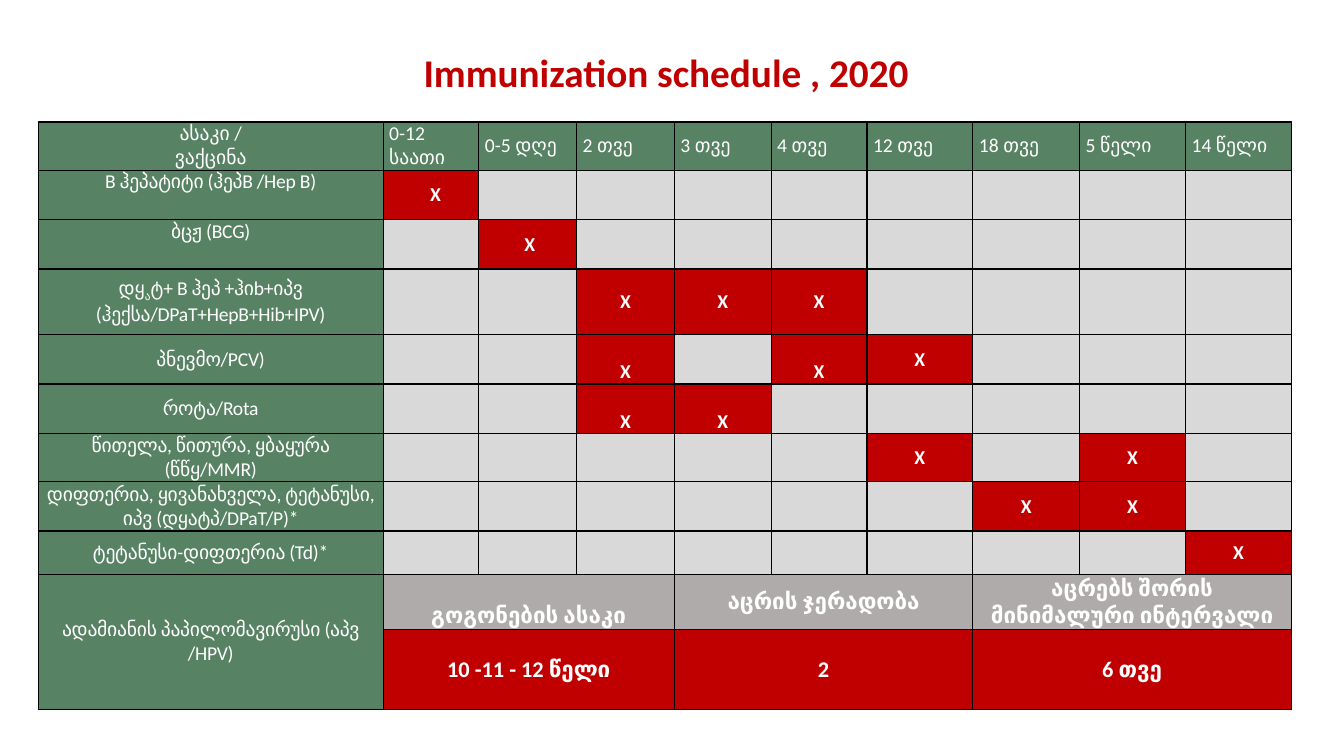
from pptx import Presentation
from pptx.dml.color import RGBColor
from pptx.enum.text import MSO_ANCHOR, PP_ALIGN
from pptx.oxml.ns import qn
from pptx.util import Inches, Pt
from lxml import etree

TOP, MID, LOW = MSO_ANCHOR.TOP, MSO_ANCHOR.MIDDLE, MSO_ANCHOR.BOTTOM
CENTER, JUST = PP_ALIGN.CENTER, PP_ALIGN.JUSTIFY

RED = RGBColor(0xC0, 0x00, 0x00)
GREEN = RGBColor(0x58, 0x82, 0x64)
PALE = RGBColor(0xD9, 0xD9, 0xD9)
GRAY = RGBColor(0xAF, 0xAB, 0xAB)
WHITE = RGBColor(0xFF, 0xFF, 0xFF)
BLACK = RGBColor(0x00, 0x00, 0x00)
FONT = "Calibri"

WIDTHS = [3.42, 0.95, 0.97, 0.97, 0.96, 0.95, 1.05, 1.06, 1.05, 1.05]
HEIGHTS = [0.48, 0.49, 0.49, 0.65, 0.49, 0.49, 0.48, 0.49, 0.43, 0.55, 0.79]

AGES = ["0-12 საათი", "0-5 დღე", "2 თვე", "3 თვე", "4 თვე", "12 თვე",
        "18 თვე", "5 წელი", "14 წელი"]

# Each vaccine: name runs, anchor of the name, {age column: anchor of the mark}
DOSES = [
    (["B ჰეპატიტი (ჰეპB /Hep B)"], TOP, {1: MID}),
    (["ბცჟ (BCG)"], TOP, {2: MID}),
    (["დყ", "ა", "ტ+ B ჰეპ +ჰიb+იპვ (ჰექსა/DPaT+HepB+Hib+IPV)"], MID,
     {3: MID, 4: MID, 5: MID}),
    (["პნევმო/PCV)"], MID, {3: LOW, 5: LOW, 6: MID}),
    (["როტა/Rota"], MID, {3: LOW, 4: LOW}),
    (["წითელა, წითურა, ყბაყურა (წწყ/MMR)"], MID, {6: MID, 8: MID}),
    (["დიფთერია, ყივანახველა, ტეტანუსი, იპვ (დყატპ/DPaT/P)*"], MID,
     {7: MID, 8: MID}),
    (["ტეტანუსი-დიფთერია (Td)*"], MID, {9: MID}),
]
HPV = "ადამიანის პაპილომავირუსი (აპვ /HPV)"
# First column, heading, anchor of the heading, value
PLAN = [
    (1, "გოგონების ასაკი", LOW, "10 -11 - 12 წელი"),
    (4, "აცრის ჯერადობა", MID, "2"),
    (7, "აცრებს შორის მინიმალური ინტერვალი", MID, "6 თვე"),
]


def add_run(para, text, size, color, bold=False, gap=0):
    run = para.add_run()
    run.text = text
    font = run.font
    font.name, font.size, font.bold = FONT, Pt(size), bold
    font.color.rgb = color
    if gap:
        run._r.get_or_add_rPr().set("spc", str(gap))
    return run


def add_edges(cell):
    props = cell._tc.get_or_add_tcPr()
    for side in ("lnL", "lnR", "lnT", "lnB"):
        line = etree.SubElement(props, qn("a:" + side), w=str(Pt(1)))
        fill = etree.SubElement(line, qn("a:solidFill"))
        etree.SubElement(fill, qn("a:srgbClr"), val=str(BLACK))


def paint(cell, color):
    cell.fill.solid()
    cell.fill.fore_color.rgb = color


def write(cell, lines, color, anchor=MID, align=CENTER, size=14,
          bold=False, gap=0):
    """Fill a cell; each line is a list of runs, the second one a subscript."""
    paint(cell, color)
    cell.vertical_anchor = anchor
    cell.margin_left = cell.margin_right = Inches(0.06)
    cell.margin_top = cell.margin_bottom = 0
    frame = cell.text_frame
    for i, parts in enumerate(lines):
        para = frame.add_paragraph() if i else frame.paragraphs[0]
        para.alignment = align
        for j, part in enumerate(parts):
            run = add_run(para, part, size, WHITE, bold, gap)
            if j == 1:
                run._r.get_or_add_rPr().set("baseline", "-25000")


def add_title(slide):
    title = slide.shapes.title
    title.left, title.top = Inches(0.1), Inches(0.28)
    title.width, title.height = Inches(13.01), Inches(0.93)
    title.text_frame.vertical_anchor = MID
    para = title.text_frame.paragraphs[0]
    para.alignment = CENTER
    para.line_spacing = 0.9
    add_run(para, "Immunization schedule , 2020", 28, RED, True)


def add_grid(slide):
    frame = slide.shapes.add_table(
        len(HEIGHTS), len(WIDTHS), Inches(0.38), Inches(1.21),
        Inches(sum(WIDTHS)), Inches(sum(HEIGHTS)))
    table = frame.table
    table.first_row = table.horz_banding = False
    for col, width in zip(table.columns, WIDTHS):
        col.width = Inches(width)
    for row, height in zip(table.rows, HEIGHTS):
        row.height = Inches(height)
    for cell in table.iter_cells():
        add_edges(cell)
        paint(cell, PALE)
    return table


def add_ages(table):
    write(table.cell(0, 0), [["ასაკი /"], ["ვაქცინა"]], GREEN, TOP)
    for col, age in enumerate(AGES, 1):
        write(table.cell(0, col), [[age]], GREEN, align=JUST)


def add_doses(table):
    for row, (name, anchor, marks) in enumerate(DOSES, 1):
        write(table.cell(row, 0), [name], GREEN, anchor, gap=-20)
        for col, place in marks.items():
            write(table.cell(row, col), [["X"]], RED, place, bold=True)
    # The first two marks sit a little right of centre
    table.cell(1, 1).margin_left = Inches(0.15)
    table.cell(2, 2).margin_left = Inches(0.1)


def add_plan(table):
    head = len(DOSES) + 1
    table.cell(head, 0).merge(table.cell(head + 1, 0))
    write(table.cell(head, 0), [[HPV]], GREEN, gap=-20)
    for col, label, anchor, value in PLAN:
        for row, text, color, place in ((head, label, GRAY, anchor),
                                        (head + 1, value, RED, MID)):
            cell = table.cell(row, col)
            cell.merge(table.cell(row, col + 2))
            write(cell, [[text]], color, place, size=16, bold=True)


def main():
    deck = Presentation()
    deck.slide_width, deck.slide_height = Inches(13.33), Inches(7.5)
    slide = deck.slides.add_slide(deck.slide_layouts[5])
    add_title(slide)
    table = add_grid(slide)
    add_ages(table)
    add_doses(table)
    add_plan(table)
    deck.save("out.pptx")


if __name__ == "__main__":
    main()
